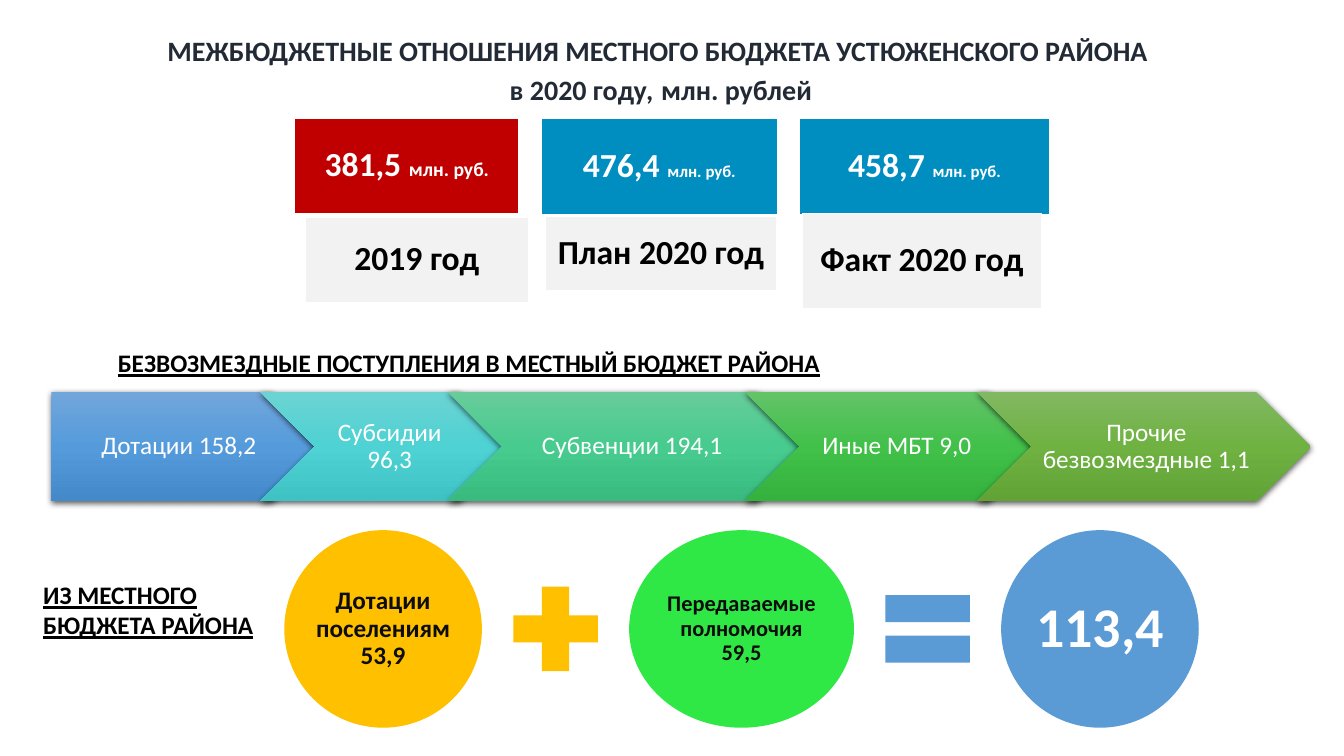
from lxml.etree import SubElement
from pptx import Presentation
from pptx.dml.color import RGBColor
from pptx.enum.shapes import MSO_SHAPE
from pptx.enum.text import MSO_ANCHOR, MSO_AUTO_SIZE, PP_ALIGN
from pptx.oxml.ns import qn
from pptx.util import Emu, Pt

EMU_PER_PX = 9144
FONT = "Calibri"
WHITE = RGBColor(0xFF, 0xFF, 0xFF)
BLACK = RGBColor(0x00, 0x00, 0x00)
NEAR_BLACK = RGBColor(0x0D, 0x0D, 0x0D)
TITLE_NAVY = RGBColor(0x22, 0x2A, 0x35)
RED = RGBColor(0xC0, 0x00, 0x00)
TEAL_BLUE = RGBColor(0x00, 0x8E, 0xC0)
LIGHT_GRAY = RGBColor(0xF2, 0xF2, 0xF2)
AMBER = RGBColor(0xFF, 0xC0, 0x00)
BRIGHT_GREEN = RGBColor(0x30, 0xE8, 0x45)
BLUE = RGBColor(0x5B, 0x9B, 0xD5)
BLUE_SHADES = (RGBColor(0x71, 0xA6, 0xDB), RGBColor(0x55, 0x9B, 0xDB), RGBColor(0x44, 0x8A, 0xCA))
AQUA_SHADES = (RGBColor(0x6C, 0xD3, 0xD3), RGBColor(0x4E, 0xD2, 0xD3), RGBColor(0x3E, 0xC2, 0xC3))
MINT_SHADES = (RGBColor(0x67, 0xCC, 0x9A), RGBColor(0x47, 0xCB, 0x8E), RGBColor(0x39, 0xBB, 0x7F))
GREEN_SHADES = (RGBColor(0x63, 0xC3, 0x68), RGBColor(0x42, 0xC1, 0x4A), RGBColor(0x34, 0xB2, 0x3D))
OLIVE_SHADES = (RGBColor(0x81, 0xB8, 0x61), RGBColor(0x6F, 0xB2, 0x42), RGBColor(0x62, 0xA3, 0x36))

BUDGET_CARDS = [
    ("381,5 ", 14, RED, (292, 117, 223, 95), "2019 год", (303, 216, 221, 84)),
    ("476,4 ", 12, TEAL_BLUE, (537, 117, 234, 96), "План 2020 год", (541, 215, 229, 73)),
    ("458,7 ", 12, TEAL_BLUE, (793, 117, 248, 96), "Факт 2020 год", (796, 212, 237, 94)),
]
RECEIPTS = [
    ("Дотации 158,2", 273, BLUE_SHADES),
    ("Субсидии 96,3", 252, AQUA_SHADES),
    ("Субвенции 194,1", 361, MINT_SHADES),
    ("Иные МБТ 9,0", 296, GREEN_SHADES),
    ("Прочие безвозмездные 1,1", 331, OLIVE_SHADES),
]
EQUATION = [
    (MSO_SHAPE.OVAL, 196, 196, AMBER, "Дотации поселениям 53,9", 18, NEAR_BLACK),
    (MSO_SHAPE.MATH_PLUS, 114, 114, AMBER, None, None, None),
    (MSO_SHAPE.OVAL, 223, 196, BRIGHT_GREEN, "Передаваемые полномочия 59,5", 16, NEAR_BLACK),
    (MSO_SHAPE.MATH_EQUAL, 114, 114, BLUE, None, None, None),
    (MSO_SHAPE.OVAL, 196, 196, BLUE, "113,4", 40, WHITE),
]


def px(*values):
    return [Emu(value * EMU_PER_PX) for value in values]


def write_text(shape, paragraphs, size=18, color=BLACK, bold=True, underline=None,
               align=PP_ALIGN.CENTER, line_spacing=0.9, insets=(10, 10, 10, 10),
               anchor=MSO_ANCHOR.MIDDLE, wrap=True):
    frame = shape.text_frame
    frame.word_wrap = wrap
    frame.vertical_anchor = anchor
    frame.margin_left, frame.margin_top, frame.margin_right, frame.margin_bottom = px(*insets)
    for index, pieces in enumerate(paragraphs):
        paragraph = frame.add_paragraph() if index else frame.paragraphs[0]
        paragraph.alignment = align
        paragraph.line_spacing = line_spacing
        for text, piece_size in pieces:
            run = paragraph.add_run()
            run.text = text
            run.font.name = FONT
            run.font.size = Pt(piece_size or size)
            run.font.bold = bold
            run.font.underline = underline
            run.font.color.rgb = color


def add_label(slide, box, paragraphs, **text_format):
    label = slide.shapes.add_textbox(*px(*box))
    write_text(label, paragraphs, line_spacing=1.0, insets=(10, 5, 10, 5),
               anchor=MSO_ANCHOR.TOP, **text_format)
    label.text_frame.auto_size = MSO_AUTO_SIZE.SHAPE_TO_FIT_TEXT


def add_plain_shape(slide, kind, box, fill=None, outline=None):
    shape = slide.shapes.add_shape(kind, *px(*box))
    shape.shadow.inherit = False
    if fill is not None:
        shape.fill.solid()
        shape.fill.fore_color.rgb = fill
    if outline is None:
        shape.line.fill.background()
    else:
        shape.line.color.rgb = outline
        shape.line.width = Pt(1)
    return shape


def add_card(slide, box, fill, pieces, color):
    card = add_plain_shape(slide, MSO_SHAPE.RECTANGLE, box, fill, WHITE)
    write_text(card, [pieces], size=24, color=color)


def fill_gradient(shape, shades):
    shape.fill.gradient()
    shape.fill.gradient_angle = 270
    stops = shape._element.spPr.find(qn("a:gradFill")).find(qn("a:gsLst"))
    stops.clear()
    for index, shade in enumerate(shades):
        stop = SubElement(stops, qn("a:gs"), pos=str(index * 50000))
        SubElement(stop, qn("a:srgbClr"), val=str(shade))


def cast_shadow(shape):
    effects = shape._element.spPr.find(qn("a:effectLst"))
    shadow = SubElement(effects, qn("a:outerShdw"), blurRad=str(Pt(4.5)), dist=str(Pt(1.5)),
                        dir="5400000", algn="ctr", rotWithShape="0")
    shadow_color = SubElement(shadow, qn("a:srgbClr"), val=str(BLACK))
    SubElement(shadow_color, qn("a:alpha"), val="63000")


def add_budget_cards(slide):
    for amount, unit_size, fill, amount_box, year, year_box in BUDGET_CARDS:
        add_card(slide, amount_box, fill, [(amount, None), ("млн. руб.", unit_size)], WHITE)
        add_card(slide, year_box, LIGHT_GRAY, [(year, None)], BLACK)


def add_receipt_arrows(slide, left=51, top=389, height=108, overlap=66):
    for index, (text, width, shades) in enumerate(RECEIPTS):
        kind = MSO_SHAPE.CHEVRON if index else MSO_SHAPE.PENTAGON
        arrow = add_plain_shape(slide, kind, (left, top, width, height))
        fill_gradient(arrow, shades)
        cast_shadow(arrow)
        write_text(arrow, [[(text, None)]], color=WHITE, bold=False,
                   insets=(8 if index else 10, 5, 3, 5))
        left += width - overlap


def add_equation(slide, left=282, middle=624, gap=16):
    for kind, width, height, fill, text, size, color in EQUATION:
        box = (left, middle - height // 2, width, height)
        shape = add_plain_shape(slide, kind, box, fill)
        if text:
            write_text(shape, [[(text, None)]], size=size, color=color, insets=(0, 0, 0, 0))
        left += width + gap


def main():
    presentation = Presentation()
    presentation.slide_width, presentation.slide_height = px(1333, 750)
    slide = presentation.slides.add_slide(presentation.slide_layouts[6])
    add_budget_cards(slide)
    add_label(slide, (57, 28, 1197, 84), [
        [("МЕЖБЮДЖЕТНЫЕ ОТНОШЕНИЯ МЕСТНОГО БЮДЖЕТА УСТЮЖЕНСКОГО РАЙОНА ", None)],
        [("в 2020 году,", None), (" ", 24), ("млн. рублей", None)],
    ], size=20, color=TITLE_NAVY)
    add_label(slide, (33, 570, 237, 71),
              [[("ИЗ МЕСТНОГО", None)], [("БЮДЖЕТА РАЙОНА", None)]],
              underline=True, align=PP_ALIGN.LEFT, wrap=False)
    add_receipt_arrows(slide)
    add_label(slide, (107, 340, 784, 40),
              [[("БЕЗВОЗМЕЗДНЫЕ ПОСТУПЛЕНИЯ В МЕСТНЫЙ БЮДЖЕТ РАЙОНА", None)]],
              underline=True, align=PP_ALIGN.LEFT)
    add_equation(slide)
    presentation.save("out.pptx")


if __name__ == "__main__":
    main()
